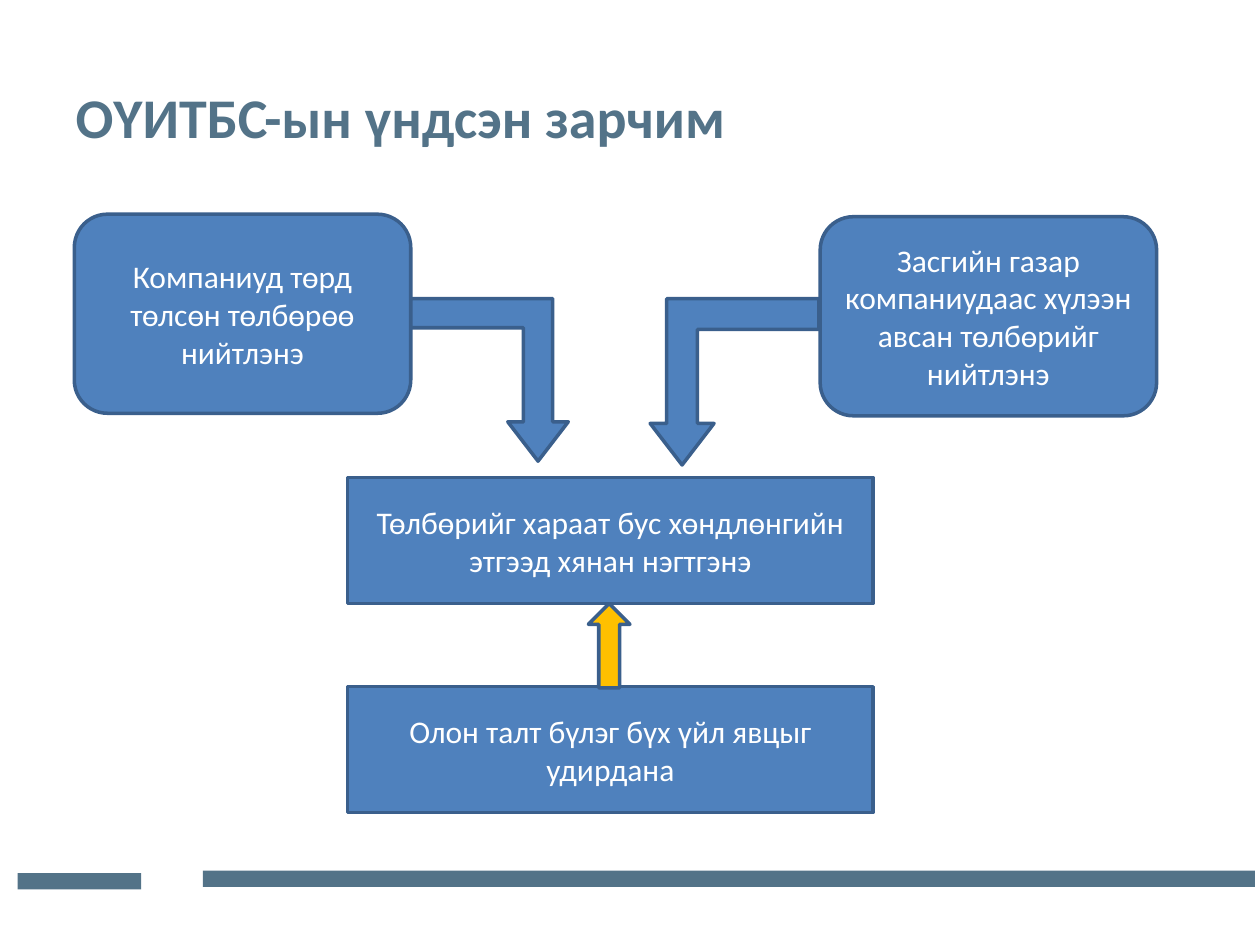
from pptx import Presentation
from pptx import util as u
from pptx.dml.color import RGBColor
from pptx.enum import shapes, text

KIND = shapes.MSO_SHAPE
FONT = "Calibri"
SLATE, BLUE, NAVY, AMBER, WHITE = "537388", "4F81BD", "3A5F8C", "FFC000", "FFFFFF"

TITLE = "ОҮИТБС-ын үндсэн зарчим"
TITLE_AREA = (0.5, 0.3, 9, 1.25)
BARS = [(0.14, 6.93, 0.98, 0.13), (1.61, 6.91, 8.35, 0.13)]

SOURCE_SIZE = (2.67, 1.58)
STEP_SIZE = (4.17, 1)
BOXES = [
    (KIND.FLOWCHART_ALTERNATE_PROCESS, (0.59, 1.7), SOURCE_SIZE,
     "Компаниуд төрд төлсөн төлбөрөө нийтлэнэ"),
    (KIND.FLOWCHART_ALTERNATE_PROCESS, (6.51, 1.72), SOURCE_SIZE,
     "Засгийн газар компаниудаас хүлээн авсан төлбөрийг нийтлэнэ"),
    (KIND.RECTANGLE, (2.76, 3.79), STEP_SIZE,
     "Төлбөрийг хараат бус хөндлөнгийн этгээд хянан нэгтгэнэ"),
    (KIND.RECTANGLE, (2.76, 5.45), STEP_SIZE,
     "Олон талт бүлэг бүх үйл явцыг удирдана"),
]
UP_ARROW = (4.67, 4.79, 0.33, 0.67)
BENT_ARROWS = [((5.16, 2.37, 1.34, 1.32), False), ((3.26, 2.37, 1.25, 1.29), True)]
BENT_ADJUSTMENTS = (0.185, 0.192, 0.25)


def color(value):
    return RGBColor.from_string(value)


def write(shape, words, align, **formats):
    frame = shape.text_frame
    frame.word_wrap = True
    frame.vertical_anchor = text.MSO_ANCHOR.MIDDLE
    para = frame.paragraphs[0]
    para.alignment = align
    span = para.add_run()
    span.text = words
    ink = formats.pop("ink")
    for name, value in formats.items():
        setattr(span.font, name, value)
    span.font.name = FONT
    span.font.color.rgb = color(ink)


def add_block(page, kind, area, fill, line=None):
    block = page.shapes.add_shape(kind, *map(u.Inches, area))
    block.shadow.inherit = False
    block.fill.solid()
    block.fill.fore_color.rgb = color(fill)
    if line:
        block.line.color.rgb = color(line)
        block.line.width = u.Pt(2)
    else:
        block.line.fill.background()
    return block


def main():
    deck = Presentation()
    deck.slide_width, deck.slide_height = u.Inches(10), u.Inches(7.5)
    page = deck.slides.add_slide(deck.slide_layouts[5])

    for area in BARS:
        add_block(page, KIND.RECTANGLE, area, SLATE)

    title = page.shapes.title
    for side, value in zip(("left", "top", "width", "height"), TITLE_AREA):
        setattr(title, side, u.Inches(value))
    write(title, TITLE, text.PP_ALIGN.LEFT, size=u.Pt(32), bold=True, ink=SLATE)

    for kind, corner, size, words in BOXES:
        box = add_block(page, kind, corner + size, BLUE, NAVY)
        write(box, words, text.PP_ALIGN.CENTER, size=u.Pt(18), ink=WHITE)

    add_block(page, KIND.UP_ARROW, UP_ARROW, AMBER, NAVY)
    for area, flipped in BENT_ARROWS:
        arrow = add_block(page, KIND.BENT_UP_ARROW, area, BLUE, NAVY)
        arrow.rotation = 180
        for index, value in enumerate(BENT_ADJUSTMENTS):
            arrow.adjustments[index] = value
        if flipped:
            arrow.element.spPr.xfrm.set("flipH", "1")

    deck.save("out.pptx")


if __name__ == "__main__":
    main()
